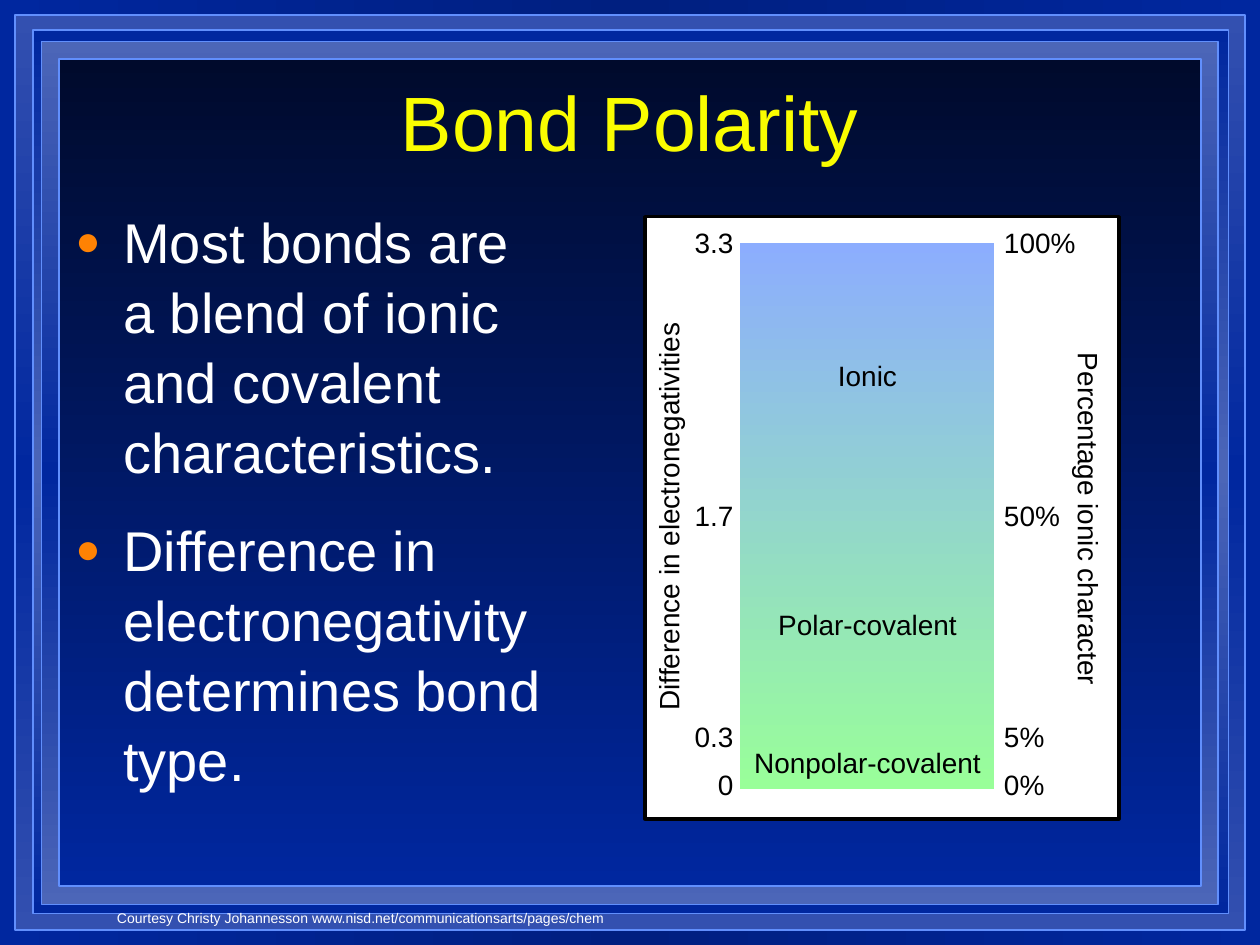
import pptx
import pptx.util
import pptx.dml.color
import pptx.enum.shapes
import pptx.enum.text
import pptx.oxml.ns
import lxml.etree

Inches, Pt = pptx.util.Inches, pptx.util.Pt
ALIGN = pptx.enum.text.PP_ALIGN
ANCHOR = pptx.enum.text.MSO_ANCHOR
qn = pptx.oxml.ns.qn

WIDTH, HEIGHT = 10, 7.5
LABEL_HEIGHT = 0.37
COLORS = {
    "blue": "00279F", "deep": "001F80", "night": "000A2C",
    "frame": "3350B0", "band": "4C66B8", "edge": "618FFD",
    "title": "FAFD00", "bullet": "FF8203", "white": "FFFFFF", "black": "000000",
    "ionic": "8CADFE", "covalent": "99FF99",
}
FRAMES = [
    ((0.12, 0.12, 9.76, 7.26), ("frame", "blue", "frame")),
    ((0.26, 0.24, 9.49, 7.01), ("blue", "band", "blue")),
    ((0.33, 0.33, 9.34, 6.85), ("band", "blue", "band")),
    ((0.47, 0.47, 9.06, 6.56), ("night", "blue")),
]
BULLETS = [
    "Most bonds are a blend of ionic and covalent characteristics.",
    "Difference in electronegativity determines bond type.",
]
BAR = (5.87, 1.92, 2.03, 4.35)
REGIONS = [("Ionic", 2.8), ("Polar-covalent", 4.77), ("Nonpolar-covalent", 5.87)]
TICKS = [("3.3", "100%", 1.74), ("1.7", "50%", 3.91),
         ("0.3", "5%", 5.66), ("0", "0%", 6.04)]
AXES = [("Difference in electronegativities", 5.305, 4.1, 270),
        ("Percentage ionic character", 8.64, 4.12, 90)]


def rgb(name):
    return pptx.dml.color.RGBColor.from_string(COLORS[name])


def set_gradient(fill, owner, names, angle):
    """Spread the named colours evenly over the gradient of owner's fill."""
    fill.gradient()
    fill.gradient_angle = angle
    stops = next(owner.iter(qn("a:gsLst")))
    for stop in list(stops):
        stops.remove(stop)
    for index, name in enumerate(names):
        position = 100000 * index // (len(names) - 1)
        stop = lxml.etree.SubElement(stops, qn("a:gs"), pos=str(position))
        lxml.etree.SubElement(stop, qn("a:srgbClr"), val=COLORS[name])


def add_rectangle(slide, area, names, line, line_width):
    """One colour name gives a solid fill, several a top-down gradient."""
    shape = slide.shapes.add_shape(
        pptx.enum.shapes.MSO_SHAPE.RECTANGLE, *map(Inches, area))
    shape.shadow.inherit = False
    if len(names) == 1:
        shape.fill.solid()
        shape.fill.fore_color.rgb = rgb(names[0])
    else:
        set_gradient(shape.fill, shape.element, names, 270)
    shape.line.color.rgb = rgb(line)
    shape.line.width = Pt(line_width)


def add_span(para, text, size, color):
    span = para.add_run()
    span.text = text
    span.font.name = "Arial"
    span.font.size = Pt(size)
    span.font.color.rgb = rgb(color)


def add_text(slide, area, text, size, color, align=ALIGN.LEFT, wrap=False):
    box = slide.shapes.add_textbox(*map(Inches, area))
    box.text_frame.word_wrap = wrap
    para = box.text_frame.paragraphs[0]
    para.alignment = align
    add_span(para, text, size, color)
    return box


def add_bullet_mark(para):
    props = para._p.get_or_add_pPr()
    props.set("marL", str(Inches(0.38)))
    props.set("indent", str(-Inches(0.38)))
    color = lxml.etree.SubElement(props, qn("a:buClr"))
    lxml.etree.SubElement(color, qn("a:srgbClr"), val=COLORS["bullet"])
    lxml.etree.SubElement(props, qn("a:buSzPct"), val="75000")
    lxml.etree.SubElement(props, qn("a:buFont"), typeface="Arial")
    lxml.etree.SubElement(props, qn("a:buChar"), char="●")


def add_bullets(slide, area):
    box = slide.shapes.add_textbox(*map(Inches, area))
    frame = box.text_frame
    frame.word_wrap = True
    for index, text in enumerate(BULLETS):
        para = frame.add_paragraph() if index else frame.paragraphs[0]
        add_bullet_mark(para)
        para.line_spacing = 1.04
        if index:
            para.space_before = Pt(16)
        add_span(para, text, 32, "white")


def add_polarity_scale(slide):
    add_rectangle(slide, (5.12, 1.72, 3.76, 4.78), ["white"], "black", 2)
    add_rectangle(slide, BAR, ["ionic", "covalent"], "white", 1)
    left, _, width, _ = BAR
    for text, top in REGIONS:
        add_text(slide, (left, top, width, LABEL_HEIGHT), text, 16, "black",
                 ALIGN.CENTER)
    for difference, percentage, top in TICKS:
        add_text(slide, (5.41, top, 0.51, LABEL_HEIGHT), difference, 16, "black",
                 ALIGN.RIGHT)
        add_text(slide, (7.87, top, 0.77, LABEL_HEIGHT), percentage, 16, "black")
    length = 3.3
    for text, center, middle, rotation in AXES:
        area = (center - length / 2, middle - LABEL_HEIGHT / 2, length, LABEL_HEIGHT)
        box = add_text(slide, area, text, 16, "black", ALIGN.CENTER)
        box.rotation = rotation


def main():
    deck = pptx.Presentation()
    deck.slide_width, deck.slide_height = Inches(WIDTH), Inches(HEIGHT)
    slide = deck.slides.add_slide(deck.slide_layouts[6])
    set_gradient(slide.background.fill, slide.element, ("blue", "deep", "blue"), 0)
    for area, names in FRAMES:
        add_rectangle(slide, area, names, "edge", 1)
    title = add_text(slide, (0.75, 0.54, WIDTH - 1.5, 0.83), "Bond Polarity", 44,
                     "title", ALIGN.CENTER, wrap=True)
    title.text_frame.vertical_anchor = ANCHOR.MIDDLE
    add_bullets(slide, (0.5, 1.58, 3.94, 5.53))
    add_text(slide, (0.83, 7.17, 4.08, LABEL_HEIGHT),
             "Courtesy Christy Johannesson www.nisd.net/communicationsarts/pages/chem",
             8, "white")
    add_polarity_scale(slide)
    deck.save("out.pptx")


if __name__ == "__main__":
    main()
